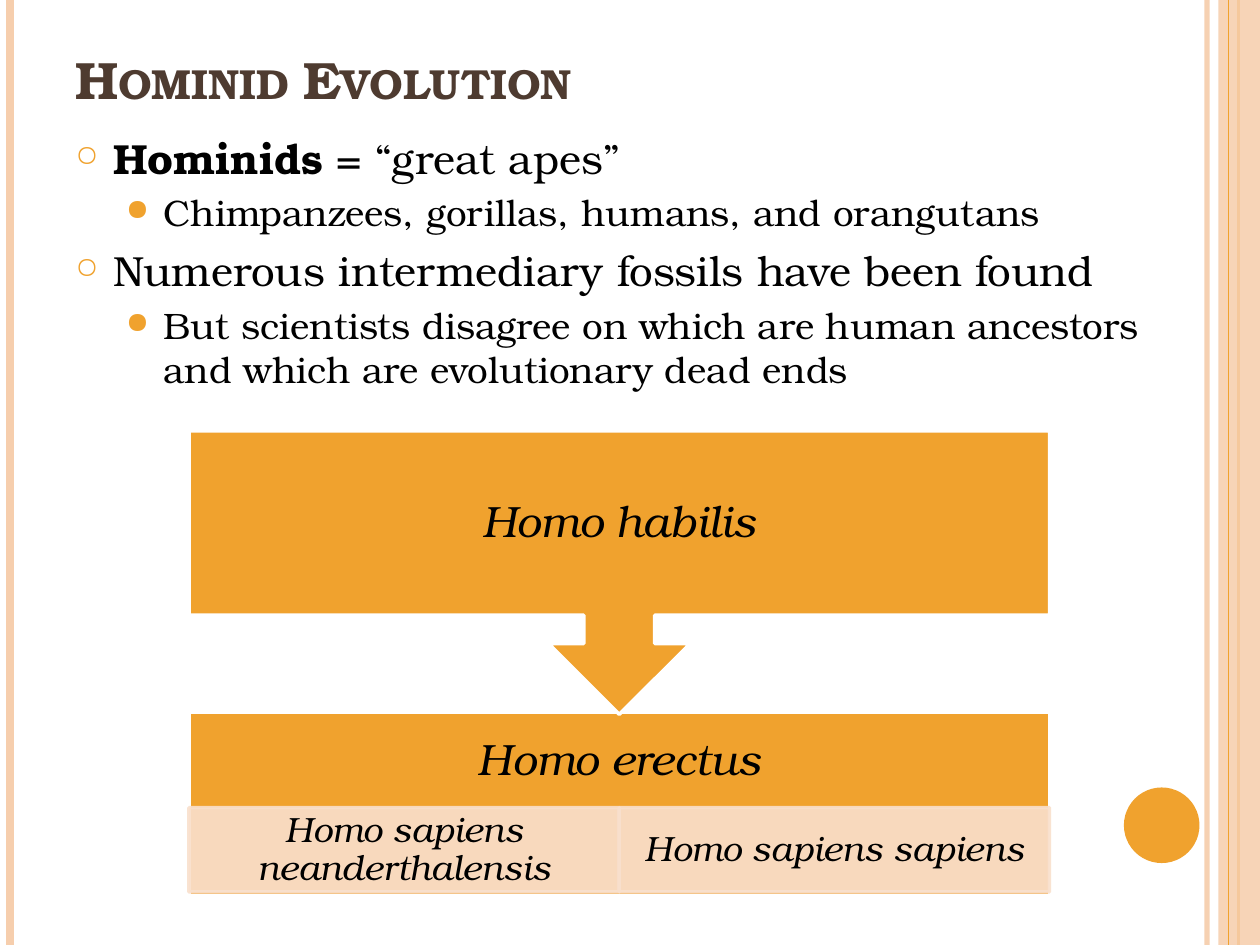
from lxml.etree import SubElement
from pptx import Presentation
from pptx.dml.color import RGBColor
from pptx.enum.shapes import MSO_CONNECTOR, MSO_SHAPE
from pptx.enum.text import MSO_ANCHOR, PP_ALIGN
from pptx.oxml.ns import qn
from pptx.util import Inches, Pt

FONT = "TeX Gyre Bonum"
ORANGE, PEACH, PALE = "F0A22E", "F6CEAD", "F9E0CD"
BROWN, BLACK, WHITE = "4E3B30", "000000", "FFFFFF"

TITLE = "Hominid Evolution"
BULLETS = [
    (0, [("Hominids", True), (" = “great apes”", False)]),
    (1, [("Chimpanzees, gorillas, humans, and orangutans", False)]),
    (0, [("Numerous intermediary fossils have been found", False)]),
    (1, [("But scientists disagree on which are human ancestors "
          "and which are evolutionary dead ends", False)]),
]
LEVELS = [
    dict(size=24, before=6, margin=0.3, mark="○", scale=70),
    dict(size=21, before=4.2, margin=0.7, mark="●", scale=80),
]
RULES_BEHIND = [(9.58, PEACH, 3, 93), (0.08, PEACH, 4.5, 100), (9.83, ORANGE, 1.5, 100)]
RULES_FRONT = [(9.75, ORANGE, 0.75, 100)]
ANCESTOR, SUCCESSOR = "Homo habilis", "Homo erectus"
SUBSPECIES = ["Homo sapiens neanderthalensis", "Homo sapiens sapiens"]
LEFT, WIDTH = 1.5, 6.83


def color(value):
    return RGBColor.from_string(value)


def set_alpha(fill_owner, percent):
    if percent < 100:
        target = next(fill_owner.iter(qn("a:srgbClr")))
        SubElement(target, qn("a:alpha"), val=str(percent * 1000))


def add_rules(page, rules):
    for x, tint, weight, alpha in rules:
        rule = page.shapes.add_connector(
            MSO_CONNECTOR.STRAIGHT, Inches(x), 0, Inches(x), Inches(7.5))
        rule.line.color.rgb = color(tint)
        rule.line.width = Pt(weight)
        properties = rule._element.spPr
        set_alpha(properties, alpha)
        SubElement(properties, qn("a:effectLst"))


def add_block(page, kind, place, fill, line=None, alpha=100):
    block = page.shapes.add_shape(kind, *map(Inches, place))
    block.shadow.inherit = False
    block.fill.solid()
    block.fill.fore_color.rgb = color(fill)
    set_alpha(block._element.spPr.find(qn("a:solidFill")), alpha)
    if line:
        block.line.color.rgb = color(line)
        block.line.width = Pt(2)
        set_alpha(block._element.spPr.find(qn("a:ln")), alpha)
    else:
        block.line.fill.background()
    return block


def add_text_frame(page, place, anchor, inset=(0.1, 0.05)):
    frame = page.shapes.add_textbox(*map(Inches, place)).text_frame
    frame.word_wrap = True
    frame.vertical_anchor = anchor
    frame.margin_left = frame.margin_right = Inches(inset[0])
    frame.margin_top = frame.margin_bottom = Inches(inset[1])
    return frame


def style(para, size, tint=BLACK):
    para.font.name = FONT
    para.font.size = Pt(size)
    para.font.color.rgb = color(tint)


def add_label(page, text, place, size, inset):
    para = add_text_frame(page, place, MSO_ANCHOR.MIDDLE, inset).paragraphs[0]
    para.text = text
    para.alignment = PP_ALIGN.CENTER
    para.line_spacing = 0.9
    style(para, size)
    para.font.italic = True


def add_title(page):
    para = add_text_frame(page, (0.5, 0.3, 8.17, 0.62), MSO_ANCHOR.BOTTOM).paragraphs[0]
    span = para.add_run()
    span.text = TITLE
    style(para, 30, BROWN)
    para.font.bold = True
    span._r.get_or_add_rPr().set("cap", "small")


def add_bullets(page):
    frame = add_text_frame(page, (0.5, 1, 8.83, 5.33), MSO_ANCHOR.TOP)
    for index, (level, spans) in enumerate(BULLETS):
        look = LEVELS[level]
        para = frame.add_paragraph() if index else frame.paragraphs[0]
        para.level = level
        para.space_before = Pt(look["before"])
        properties = para._p.get_or_add_pPr()
        properties.set("marL", str(Inches(look["margin"])))
        properties.set("indent", str(Inches(-0.3)))
        tint = SubElement(properties, qn("a:buClr"))
        SubElement(tint, qn("a:srgbClr"), val=ORANGE)
        SubElement(properties, qn("a:buSzPct"), val=str(look["scale"] * 1000))
        SubElement(properties, qn("a:buChar"), char=look["mark"])
        style(para, look["size"])
        for text, bold in spans:
            span = para.add_run()
            span.text = text
            span.font.bold = bold


def add_lineage(page):
    wide, narrow = (0.19, 0.19), (0.16, 0.03)
    add_block(page, MSO_SHAPE.RECTANGLE, (LEFT, 5.65, WIDTH, 1.46), ORANGE, WHITE)
    add_label(page, SUCCESSOR, (LEFT, 5.65, WIDTH, 0.79), 25, wide)
    half = WIDTH / len(SUBSPECIES)
    for index, name in enumerate(SUBSPECIES):
        place = (LEFT + index * half, 6.41, half, 0.67)
        add_block(page, MSO_SHAPE.RECTANGLE, place, PALE, PALE, 90)
        add_label(page, name, place, 20, narrow)
    callout = add_block(
        page, MSO_SHAPE.UP_ARROW_CALLOUT, (LEFT, 3.42, WIDTH, 2.25), ORANGE, WHITE)
    callout.rotation = 180
    add_label(page, ANCESTOR, (LEFT, 3.42, WIDTH, 1.46), 25, wide)


def main():
    deck = Presentation()
    deck.slide_width, deck.slide_height = Inches(10), Inches(7.5)
    page = deck.slides.add_slide(deck.slide_layouts[6])
    add_rules(page, RULES_BEHIND)
    add_block(page, MSO_SHAPE.RECTANGLE, (9.67, 0, 0.33, 7.5), PEACH, alpha=87)
    add_rules(page, RULES_FRONT)
    add_block(page, MSO_SHAPE.OVAL, (8.92, 6.25, 0.6, 0.6), ORANGE)
    add_title(page)
    add_bullets(page)
    add_lineage(page)
    deck.save("out.pptx")


if __name__ == "__main__":
    main()
